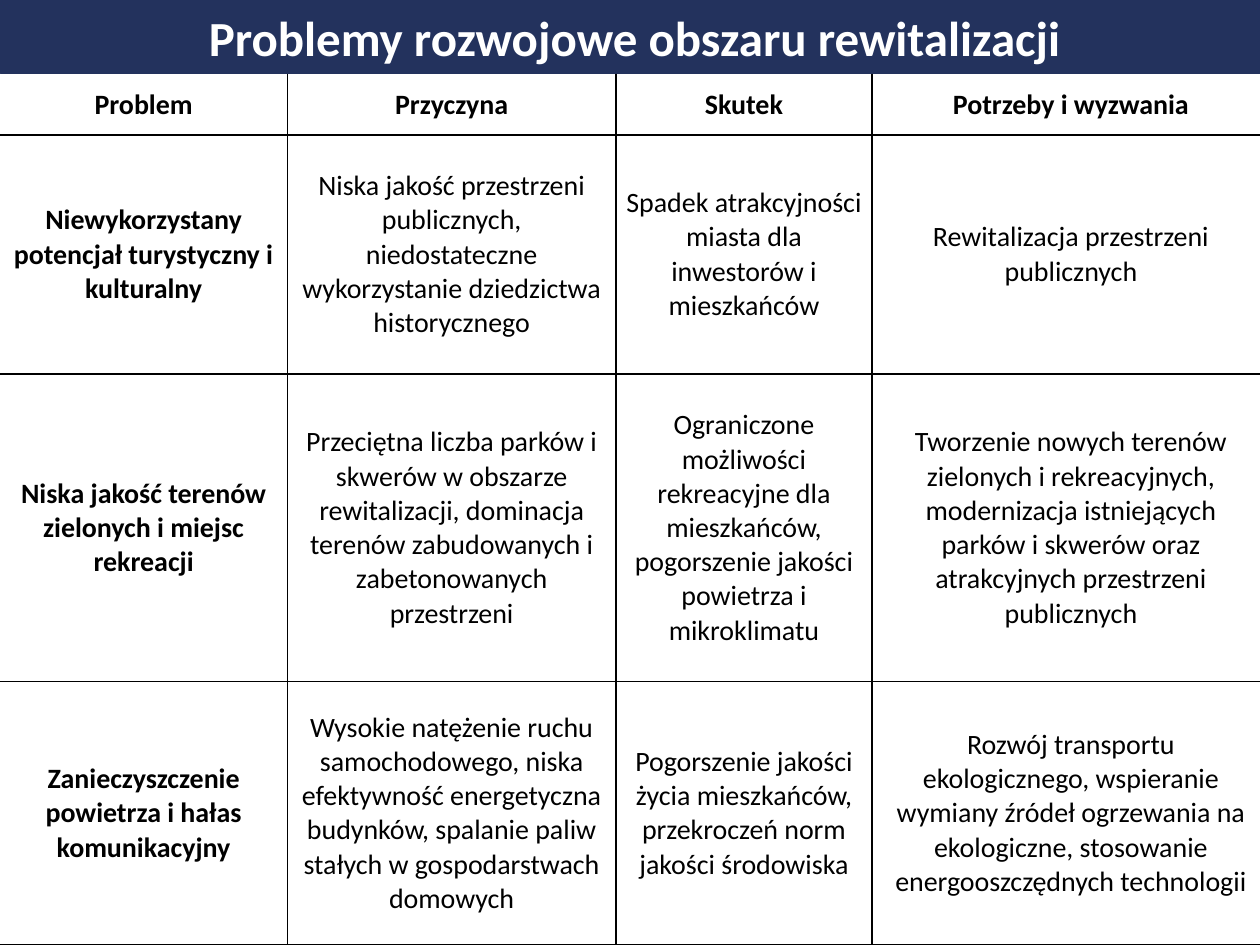
from lxml import etree
from pptx import Presentation
from pptx.dml.color import RGBColor
from pptx.enum.text import MSO_ANCHOR, MSO_AUTO_SIZE, PP_ALIGN
from pptx.oxml.ns import qn
from pptx.util import Inches, Pt

MIDDLE = MSO_ANCHOR.MIDDLE
CENTER = PP_ALIGN.CENTER
NO_FIT = MSO_AUTO_SIZE.NONE

NAVY = RGBColor(0x23, 0x32, 0x5D)
WHITE = RGBColor(0xFF, 0xFF, 0xFF)
BLACK = RGBColor(0, 0, 0)
FONT = "Calibri"

TITLE = "Problemy rozwojowe obszaru rewitalizacji"
ROWS = [
    ("Problem", "Przyczyna", "Skutek", "Potrzeby i wyzwania"),
    ("Niewykorzystany potencjał turystyczny i kulturalny",
     "Niska jakość przestrzeni publicznych, niedostateczne wykorzystanie "
     "dziedzictwa historycznego",
     "Spadek atrakcyjności miasta dla inwestorów i mieszkańców",
     "Rewitalizacja przestrzeni publicznych"),
    ("Niska jakość terenów zielonych i miejsc rekreacji",
     "Przeciętna liczba parków i skwerów w obszarze rewitalizacji, dominacja "
     "terenów zabudowanych i zabetonowanych przestrzeni",
     "Ograniczone możliwości rekreacyjne dla mieszkańców, pogorszenie jakości "
     "powietrza i mikroklimatu",
     "Tworzenie nowych terenów zielonych i rekreacyjnych, modernizacja "
     "istniejących parków i skwerów oraz atrakcyjnych przestrzeni publicznych"),
    ("Zanieczyszczenie powietrza i hałas komunikacyjny",
     "Wysokie natężenie ruchu samochodowego, niska efektywność energetyczna "
     "budynków, spalanie paliw stałych w gospodarstwach domowych",
     "Pogorszenie jakości życia mieszkańców, przekroczeń norm jakości środowiska",
     "Rozwój transportu ekologicznego, wspieranie wymiany źródeł ogrzewania na "
     "ekologiczne, stosowanie energooszczędnych technologii"),
]
COL_WIDTHS = [2.28, 2.61, 2.03, 3.16]
ROW_HEIGHTS = [0.48, 1.9, 2.44, 2.09]
WIDTH, TITLE_HEIGHT = 10.07, 0.59


def format_text(tf, size, color, bold):
    p = tf.paragraphs[0]
    p.alignment = CENTER
    font = p.runs[0].font
    font.name, font.size, font.bold = FONT, Pt(size), bold
    font.color.rgb = color


def set_borders(cell, colors):
    """Draw 1 pt borders; call before filling, as the schema puts lines first."""
    tc_pr = cell._tc.get_or_add_tcPr()
    for side, color in colors.items():
        ln = etree.SubElement(tc_pr, qn(f"a:ln{side}"), w=str(Pt(1)))
        fill = etree.SubElement(ln, qn("a:solidFill"))
        etree.SubElement(fill, qn("a:srgbClr"), val=str(color))


def add_title(slide):
    sp = slide.shapes.title
    sp.left, sp.top = Inches(0), Inches(0)
    sp.width, sp.height = Inches(WIDTH), Inches(TITLE_HEIGHT)
    sp.fill.solid()
    sp.fill.fore_color.rgb = NAVY
    tf = sp.text_frame
    tf.text = TITLE
    tf.auto_size = NO_FIT
    tf.vertical_anchor = MIDDLE
    format_text(tf, 28, WHITE, True)


def add_problem_table(slide):
    table = slide.shapes.add_table(
        len(ROWS), len(COL_WIDTHS), Inches(0), Inches(TITLE_HEIGHT),
        Inches(WIDTH), Inches(sum(ROW_HEIGHTS))).table
    for column, width in zip(table.columns, COL_WIDTHS):
        column.width = Inches(width)
    for row, height in zip(table.rows, ROW_HEIGHTS):
        row.height = Inches(height)

    last_col = len(COL_WIDTHS) - 1
    for i, texts in enumerate(ROWS):
        for j, text in enumerate(texts):
            cell = table.cell(i, j)
            set_borders(cell, {
                "L": WHITE if j == 0 else BLACK,
                "R": WHITE if j == last_col else BLACK,
                "T": WHITE if i == 0 else BLACK,
                "B": BLACK,
            })
            cell.fill.solid()
            cell.fill.fore_color.rgb = WHITE
            cell.vertical_anchor = MIDDLE
            cell.margin_left = cell.margin_right = Inches(0.03 if i == 0 else 0.07)
            cell.margin_top = cell.margin_bottom = 0
            cell.text_frame.text = text
            format_text(cell.text_frame, 16, BLACK, i == 0 or j == 0)


def main():
    prs = Presentation()
    prs.slide_width, prs.slide_height = Inches(10), Inches(7.5)
    slide = prs.slides.add_slide(prs.slide_layouts[5])
    add_title(slide)
    add_problem_table(slide)
    prs.save("out.pptx")


if __name__ == "__main__":
    main()
